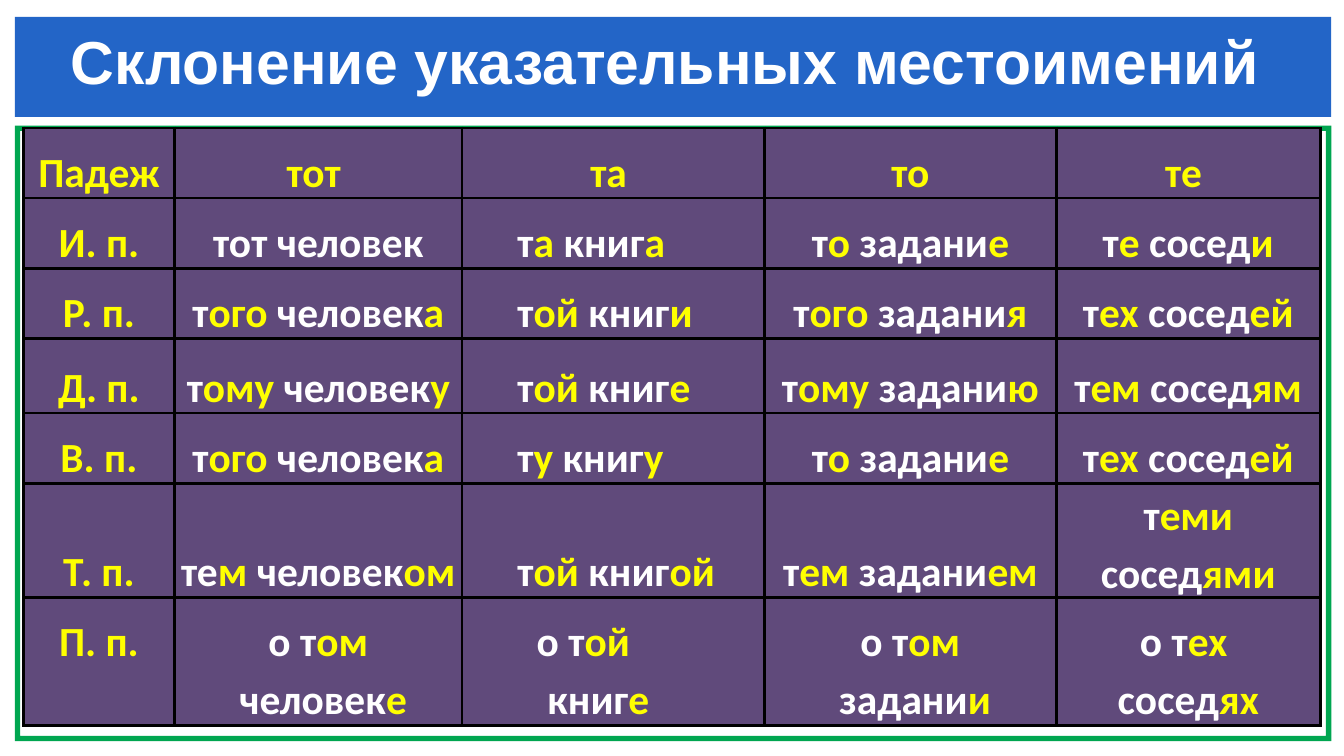
from lxml import etree
from pptx import Presentation
from pptx.dml.color import RGBColor
from pptx.enum.shapes import MSO_SHAPE
from pptx.enum.text import MSO_ANCHOR, PP_ALIGN
from pptx.oxml.ns import qn
from pptx.util import Inches, Pt

RECT, FRAME = MSO_SHAPE.RECTANGLE, MSO_SHAPE.FRAME
LEFT, CENTER = PP_ALIGN.LEFT, PP_ALIGN.CENTER
BOTTOM = MSO_ANCHOR.BOTTOM

WHITE, YELLOW, BLACK = "FFFFFF", "FFFF00", "000000"
BLUE, GREEN, PURPLE = "2365C7", "00A650", "604A7B"

TITLE = "Cклонение указательных местоимений"
# Parts between bars alternate: white, yellow, white, yellow.
ROWS = [
    ["|Падеж", "|тот ", "|та ", "|то", "|те "],
    ["|И. п.", "тот человек", "т|а| книг|а", "т|о| задани|е", "т|е |сосед|и"],
    ["|Р. п.", "т|ого| человек|а", "т|ой| книг|и", "т|ого| задани|я",
     "т|ех| сосед|ей"],
    ["|Д. п.", "т|ому| человек|у", "т|ой| книг|е", "т|ому| задани|ю",
     "т|ем| сосед|ям"],
    ["|В. п.", "т|ого| человек|а", "т|у| книг|у", "т|о| задани|е",
     "т|ех |сосед|ей"],
    ["|Т. п.", "те|м| человек|ом", "т|ой| книг|ой", "т|ем| задани|ем",
     "т|еми| сосед|ями"],
    ["|П. п.", "о т|ом\n человек|е", "о т|ой\nкниг|е", "о т|ом\n задани|и",
     "о т|ех \nсосед|ях"],
]
WIDTHS = [0.71, 1.35, 1.42, 1.37, 1.24]
HEIGHTS = [0.33, 0.33, 0.33, 0.35, 0.33, 0.53, 0.6]
TABLE_X, TABLE_Y = 0.11, 0.6
LINE_H = 0.27
BOOK_COL, LAST_ROW = 2, len(ROWS) - 1
INDENT, LAST_INDENTS = 0.26, [0.35, 0.4]


def color(code):
    return RGBColor.from_string(code)


def write(frame, text, font="Calibri", size=14, align=CENTER, spacing=1.15,
          indents=()):
    """Fill a text frame; bars in the text switch between white and yellow."""
    frame.word_wrap = True
    for n, line in enumerate(text.split("\n")):
        para = frame.add_paragraph() if n else frame.paragraphs[0]
        para.alignment, para.line_spacing = align, spacing
        if indents:
            para._p.get_or_add_pPr().set("marL", str(Inches(indents[n])))
        for i, part in enumerate(line.split("|")):
            if part:
                run = para.add_run()
                run.text = part
                run.font.name, run.font.size = font, Pt(size)
                run.font.bold = True
                run.font.color.rgb = color(YELLOW if i % 2 else WHITE)


def add_block(slide, kind, box, fill):
    shape = slide.shapes.add_shape(kind, *map(Inches, box))
    shape.shadow.inherit = False
    shape.fill.solid()
    shape.fill.fore_color.rgb = color(fill)
    shape.line.fill.background()
    return shape


def add_borders(cell):
    props = cell._tc.get_or_add_tcPr()
    for n, side in enumerate(("a:lnL", "a:lnR", "a:lnT", "a:lnB")):
        line = etree.Element(qn(side), w=str(Pt(1)))
        fill = etree.SubElement(line, qn("a:solidFill"))
        etree.SubElement(fill, qn("a:srgbClr"), val=BLACK)
        props.insert(n, line)


def clear_margins(item):
    item.margin_left = item.margin_right = 0
    item.margin_top = item.margin_bottom = 0


def add_cases(slide):
    table = slide.shapes.add_table(
        len(ROWS), len(WIDTHS), Inches(TABLE_X), Inches(TABLE_Y),
        Inches(sum(WIDTHS)), Inches(sum(HEIGHTS))).table
    for col, width in zip(table.columns, WIDTHS):
        col.width = Inches(width)
    for r, (row, height) in enumerate(zip(ROWS, HEIGHTS)):
        table.rows[r].height = Inches(height)
        for c, text in enumerate(row):
            cell = table.cell(r, c)
            clear_margins(cell)
            cell.vertical_anchor = BOTTOM
            cell.fill.solid()
            cell.fill.fore_color.rgb = color(PURPLE)
            add_borders(cell)
            if c == BOOK_COL and r > 0:
                indents = LAST_INDENTS if r == LAST_ROW else [INDENT]
                write(cell.text_frame, text, align=LEFT, indents=indents)
            else:
                write(cell.text_frame, text)
    table.cell(LAST_ROW, 0).margin_bottom = Inches(LINE_H)


def main():
    deck = Presentation()
    deck.slide_width, deck.slide_height = Inches(6.31), Inches(3.55)
    slide = deck.slides.add_slide(deck.slide_layouts[6])
    border = add_block(slide, FRAME, (0.07, 0.59, 6.18, 2.89), GREEN)
    border.adjustments[0] = 0.025 / 2.89
    add_block(slide, RECT, (0.07, 0.08, 6.18, 0.47), BLUE)
    title = slide.shapes.add_textbox(
        *map(Inches, (0.33, 0.11, 5.65, 0.35))).text_frame
    clear_margins(title)
    write(title, TITLE, font="Arial", size=20.5, align=LEFT, spacing=1.0)
    add_cases(slide)
    deck.save("out.pptx")


if __name__ == "__main__":
    main()
